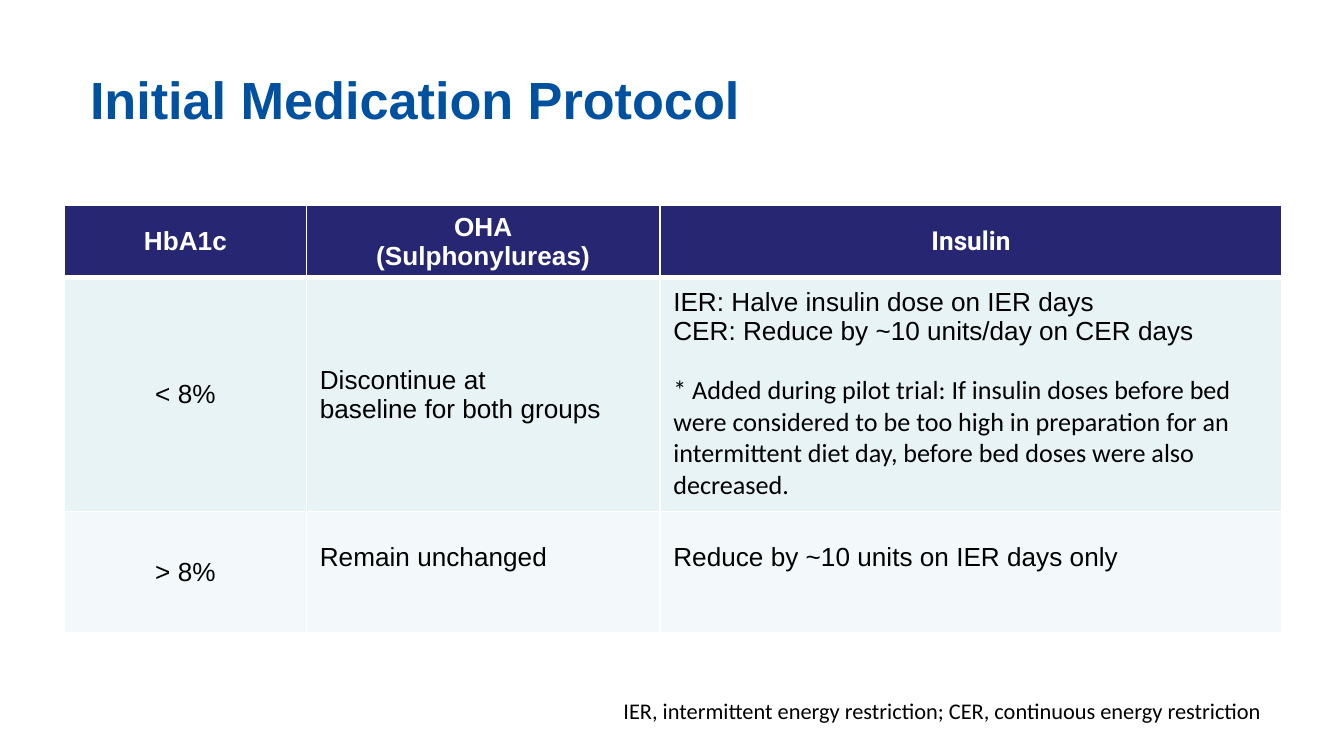
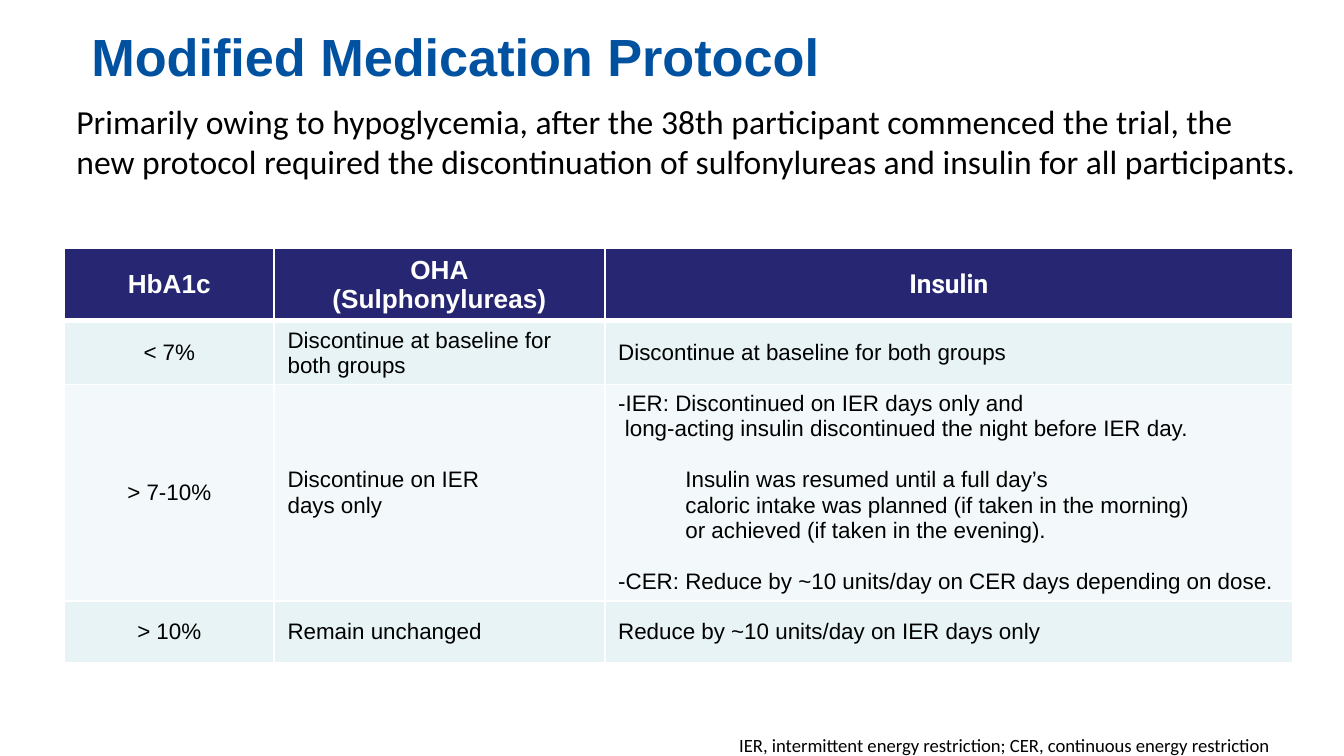
from lxml import etree
from pptx import Presentation
from pptx.dml.color import RGBColor
from pptx.enum.text import MSO_ANCHOR as Anchor, MSO_AUTO_SIZE as AutoSize, PP_ALIGN as Align
from pptx.oxml import parse_xml
from pptx.oxml.ns import nsdecls
from pptx.util import Pt

PX = 9144
COLORS = {
    "title": "0051A0",
    "header": "262673",
    "band_dark": "E7F3F4",
    "band_light": "F3F9FA",
    "text": "000000",
    "white": "FFFFFF",
}
ABBREVIATIONS = "IER, intermittent energy restriction; CER, continuous energy restriction"
HEADER = [["HbA1c"], ["OHA", "(Sulphonylureas)"], ["Insulin"]]
HEADER_FONTS = ["Arial", "Arial", "Roboto"]

PROTOCOLS = [
    {
        "title": "Initial Medication Protocol",
        "title_at": (46, 50),
        "intro": [],
        "table_at": (48, 153),
        "columns": [180, 263, 463],
        "rows": [52, 174, 90],
        "size": 14,
        "body": [
            [
                ["< 8%"],
                ["Discontinue at", "baseline for both groups"],
                [
                    "IER: Halve insulin dose on IER days",
                    "CER: Reduce by ~10 units/day on CER days",
                    ("* Added during pilot trial: If insulin doses before bed were considered to be "
                     "too high in preparation for an intermittent diet day, before bed doses were "
                     "also decreased.", {"gap": 15, "font": "Calibri"}),
                ],
            ],
            [["> 8%"], ["Remain unchanged"], ["Reduce by ~10 units on IER days only"]],
        ],
        "raised_cells": [(2, 1), (2, 2)],
        "note": {"at": (454, 514, 501, 30), "size": 12, "align": Align.LEFT},
    },
    {
        "title": "Modified Medication Protocol",
        "title_at": (47, 18),
        "intro": [
            "Primarily owing to hypoglycemia, after the 38th participant commenced the trial, the",
            "new protocol required the discontinuation of sulfonylureas and insulin for all participants.",
        ],
        "table_at": (48, 185),
        "columns": [156, 246, 512],
        "rows": [53, 47, 159, 46],
        "size": 12,
        "body": [
            [
                ["< 7%"],
                ["Discontinue at baseline for both groups"],
                ["Discontinue at baseline for both groups"],
            ],
            [
                ["> 7-10%"],
                ["Discontinue on IER", "days only"],
                [
                    "-IER: Discontinued on IER days only and",
                    ("long-acting insulin discontinued the night before IER day.", {"indent": 5}),
                    ("Insulin was resumed until a full day’s", {"indent": 50, "gap": 14}),
                    ("caloric intake was planned (if taken in the morning)", {"indent": 50}),
                    ("or achieved (if taken in the evening).", {"indent": 50}),
                    ("-CER: Reduce by ~10 units/day on CER days depending on dose.", {"gap": 14}),
                ],
            ],
            [["> 10%"], ["Remain unchanged"], ["Reduce by ~10 units/day on IER days only"]],
        ],
        "raised_cells": [],
        "note": {"at": (532, 541, 422, 27), "size": 10, "align": Align.RIGHT},
    },
]


def write(frame, lines, size, font, color="text", bold=False, align=Align.LEFT):
    frame.word_wrap = True
    for index, line in enumerate(lines):
        text, options = line if isinstance(line, tuple) else (line, {})
        paragraph = frame.paragraphs[0] if index == 0 else frame.add_paragraph()
        paragraph.text = text
        paragraph.alignment = align
        if "indent" in options:
            properties = paragraph._p.get_or_add_pPr()
            properties.set("marL", str(options["indent"] * PX))
            properties.set("indent", "0")
        paragraph.space_before = Pt(options.get("gap", 0))
        paragraph.font.size = Pt(size)
        paragraph.font.name = options.get("font", font)
        paragraph.font.bold = bold
        paragraph.font.color.rgb = RGBColor.from_string(COLORS[color])


def style_cell(cell, fill, bottom_width):
    cell.vertical_anchor = Anchor.MIDDLE
    cell.fill.solid()
    cell.fill.fore_color.rgb = RGBColor.from_string(COLORS[fill])
    properties = cell._tc.get_or_add_tcPr()
    for index, side in enumerate("LRTB"):
        width = bottom_width if side == "B" else 1
        line = parse_xml(f'<a:ln{side} {nsdecls("a")} w="{Pt(width)}"/>')
        solid = etree.SubElement(line, f"{{{line.nsmap['a']}}}solidFill")
        etree.SubElement(solid, f"{{{line.nsmap['a']}}}srgbClr", val=COLORS["white"])
        properties.insert(index, line)


presentation = Presentation()
presentation.slide_width = 1000 * PX
presentation.slide_height = 5625 * PX // 10

for protocol in PROTOCOLS:
    slide = presentation.slides.add_slide(presentation.slide_layouts[5])

    title = slide.shapes.title
    left, top = protocol["title_at"]
    title.left, title.top, title.width, title.height = left * PX, top * PX, 907 * PX, 71 * PX
    title_frame = title.text_frame
    title_frame.auto_size = AutoSize.NONE
    title_frame.vertical_anchor = Anchor.TOP
    title_frame.margin_left = 21 * PX
    write(title_frame, [protocol["title"]], 28, "Arial", "title", True)
    title_frame.paragraphs[0].line_spacing = 0.9

    columns, rows = protocol["columns"], protocol["rows"]
    left, top = protocol["table_at"]
    table = slide.shapes.add_table(
        len(rows), len(columns), left * PX, top * PX, sum(columns) * PX, sum(rows) * PX
    ).table
    for column, width in zip(table.columns, columns):
        column.width = width * PX
    for row, height in zip(table.rows, rows):
        row.height = height * PX

    for column, lines in enumerate(HEADER):
        cell = table.cell(0, column)
        style_cell(cell, "header", 3)
        write(cell.text_frame, lines, 14, HEADER_FONTS[column], "white", True, Align.CENTER)

    for row, cells in enumerate(protocol["body"], start=1):
        for column, lines in enumerate(cells):
            cell = table.cell(row, column)
            style_cell(cell, "band_dark" if row % 2 else "band_light", 1)
            align = Align.CENTER if column == 0 else Align.LEFT
            write(cell.text_frame, lines, protocol["size"], "Arial", align=align)

    for row, column in protocol["raised_cells"]:
        table.cell(row, column).margin_bottom = 27 * PX

    if protocol["intro"]:
        intro = slide.shapes.add_textbox(47 * PX, 70 * PX, 935 * PX, 71 * PX)
        write(intro.text_frame, protocol["intro"], 18, "Calibri")

    note = protocol["note"]
    note_box = slide.shapes.add_textbox(*(length * PX for length in note["at"]))
    write(note_box.text_frame, [ABBREVIATIONS], note["size"], "Calibri", align=note["align"])

presentation.save("out.pptx")
